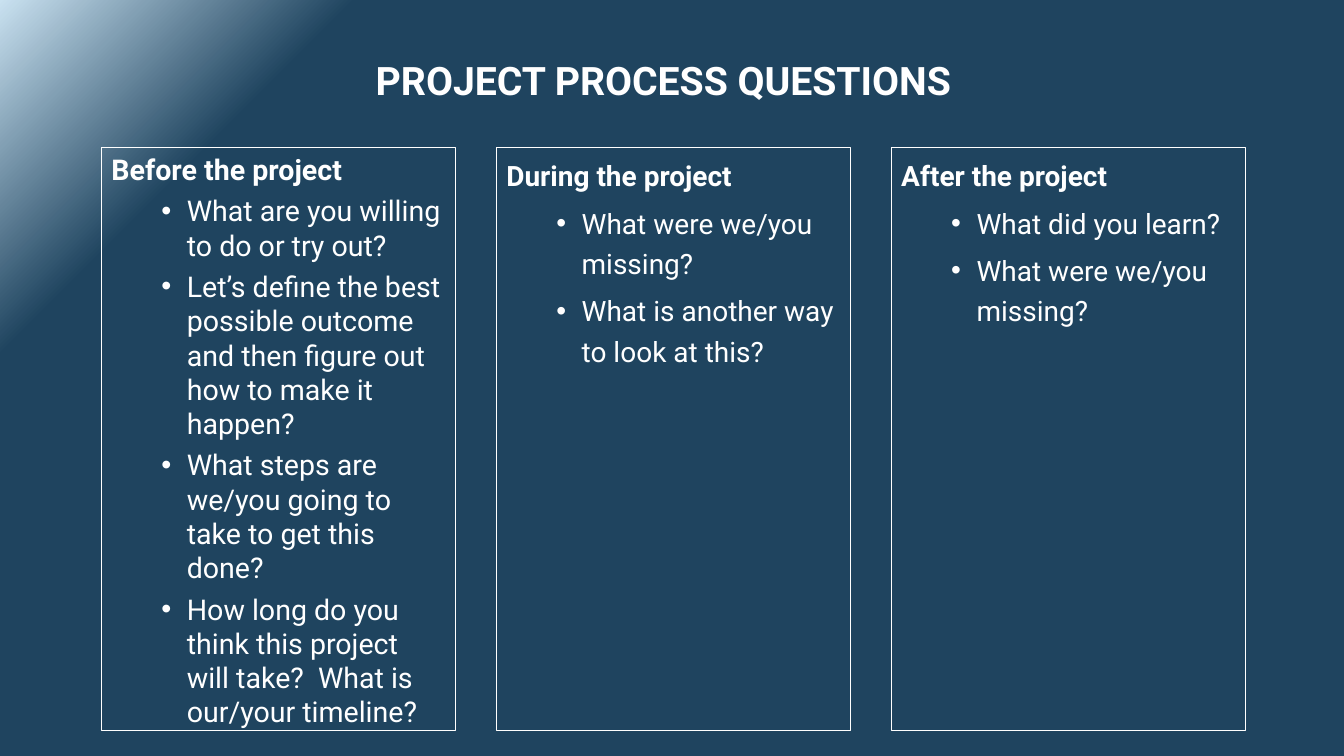
from dataclasses import dataclass

from lxml import etree
from pptx import Presentation
from pptx.dml.color import RGBColor
from pptx.enum import shapes, text
from pptx.oxml import ns
from pptx.util import Cm, Pt


@dataclass(frozen=True)
class Theme:
    """Colours, font and type sizes of the slide."""
    navy: str = "1F445F"
    glow: str = "C9E1F0"
    white: RGBColor = RGBColor(255, 255, 255)
    face: str = "Roboto"
    title_size: float = 28
    panel_size: float = 20
    full_panel_size: float = 20.4


THEME = Theme()

PANELS = [
    ("Before the project", THEME.full_panel_size, 1.0, [
        "What are you willing to do or try out?",
        "Let’s define the best possible outcome and then figure out how to make it happen?",
        "What steps are we/you going to take to get this done?",
        "How long do you think this project will take?  What is our/your timeline?",
    ]),
    ("During the project", THEME.panel_size, 1.2, [
        "What were we/you missing?",
        "What is another way to look at this?",
    ]),
    ("After the project", THEME.panel_size, 1.2, [
        "What did you learn?",
        "What were we/you missing?",
    ]),
]


def apply(target, formats):
    """Set each attribute named in formats on the target."""
    for name, value in formats.items():
        setattr(target, name, value)


def write(paragraph, words, size, bold, formats):
    """Fill a paragraph with one formatted run."""
    apply(paragraph, formats)
    run = paragraph.add_run()
    run.text = words
    apply(run.font, {"name": THEME.face, "size": Pt(size), "bold": bold})
    run.font.color.rgb = THEME.white


def add_bullet(paragraph):
    """Give a paragraph a round bullet with a hanging indent."""
    properties = paragraph._p.get_or_add_pPr()
    properties.set("marL", str(Cm(1.9)))
    properties.set("indent", str(-Cm(0.64)))
    etree.SubElement(properties, ns.qn("a:buFont"), typeface="Arial")
    etree.SubElement(properties, ns.qn("a:buChar"), char="•")


def paint_background(slide):
    """Fill the slide with navy that glows in the top left corner."""
    slide.background.fill.gradient()
    gradient = slide.element.find(".//" + ns.qn("a:gradFill"))
    for part in list(gradient):
        gradient.remove(part)
    stops = etree.SubElement(gradient, ns.qn("a:gsLst"))
    for percent, colour in ((0, THEME.navy), (83, THEME.navy), (100, THEME.glow)):
        stop = etree.SubElement(stops, ns.qn("a:gs"), pos=str(percent * 1000))
        etree.SubElement(stop, ns.qn("a:srgbClr"), val=colour)
    circle = etree.SubElement(gradient, ns.qn("a:path"), path="circle")
    etree.SubElement(circle, ns.qn("a:fillToRect"), l="100000", t="100000")


def set_title(slide, words):
    """Place and format the slide title."""
    title = slide.shapes.title
    apply(title, {"left": Cm(2.34), "top": Cm(0.51),
                  "width": Cm(28.75), "height": Cm(3.15)})
    apply(title.text_frame, {"vertical_anchor": text.MSO_ANCHOR.MIDDLE,
                             "word_wrap": True,
                             "auto_size": text.MSO_AUTO_SIZE.NONE})
    write(title.text_frame.paragraphs[0], words, THEME.title_size, True,
          {"alignment": text.PP_ALIGN.CENTER, "line_spacing": 0.9})


def add_panel(slide, left, heading, size, spacing, questions):
    """Add an outlined panel with a heading and bulleted questions."""
    panel = slide.shapes.add_shape(
        shapes.MSO_SHAPE.RECTANGLE, left, Cm(3.71), Cm(8.92), Cm(14.7))
    panel.shadow.inherit = False
    panel.fill.background()
    panel.line.color.rgb = THEME.white
    panel.line.width = Pt(0.75)
    frame = panel.text_frame
    apply(frame, {"word_wrap": True, "vertical_anchor": text.MSO_ANCHOR.TOP,
                  "auto_size": text.MSO_AUTO_SIZE.NONE})
    formats = {"alignment": text.PP_ALIGN.LEFT, "line_spacing": spacing}
    write(frame.paragraphs[0], heading, size, True, formats)
    for question in questions:
        paragraph = frame.add_paragraph()
        add_bullet(paragraph)
        write(paragraph, question, size, False,
              {**formats, "level": 1, "space_before": Pt(5)})


def main():
    """Build the slide and save it."""
    deck = Presentation()
    apply(deck, {"slide_width": Cm(33.87), "slide_height": Cm(19.05)})
    slide = deck.slides.add_slide(deck.slide_layouts[5])
    paint_background(slide)
    set_title(slide, "PROJECT PROCESS QUESTIONS")
    for column, panel in enumerate(PANELS):
        add_panel(slide, Cm(2.56 + 9.95 * column), *panel)
    deck.save("out.pptx")


if __name__ == "__main__":
    main()
